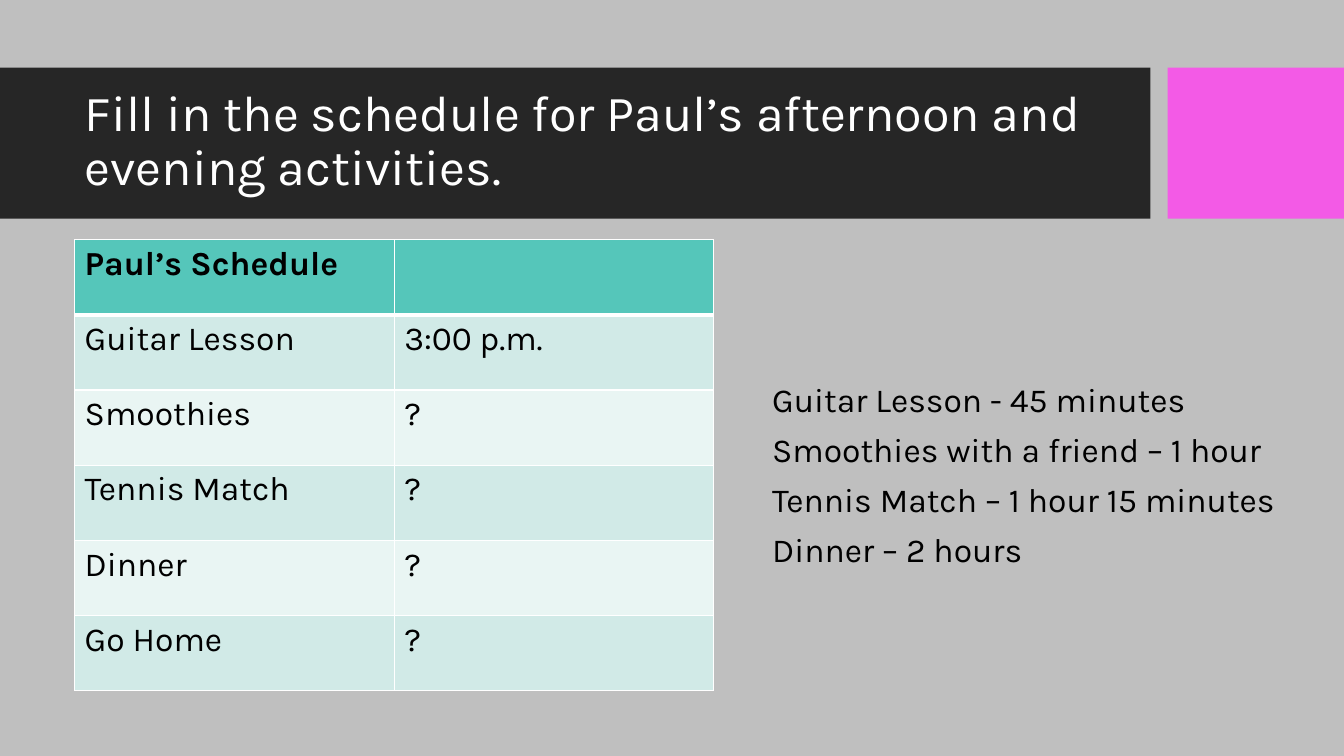
import pptx
import pptx.dml.color
import pptx.enum.shapes
import pptx.enum.text
import pptx.oxml
import pptx.oxml.ns
import pptx.util

Inches, Pt = pptx.util.Inches, pptx.util.Pt
BLACK, WHITE = "000000", "FFFFFF"
LEFT = 0.74  # shared left edge of title and table


def color(hex_code):
    return pptx.dml.color.RGBColor.from_string(hex_code)


def write(paragraph, text, size, hex_code, bold=False):
    run = paragraph.add_run()
    run.text = text
    run.font.name = "Karla"
    run.font.size = Pt(size)
    run.font.bold = bold
    run.font.color.rgb = color(hex_code)


deck = pptx.Presentation()
deck.slide_width, deck.slide_height = Inches(13.33), Inches(7.5)
slide = deck.slides.add_slide(deck.slide_layouts[5])
slide.background.fill.solid()
slide.background.fill.fore_color.rgb = color("BFBFBF")

# Title band and accent block
for left, width, band_fill in [(0, 11.41, "262626"), (11.58, 1.75, "F35AE6")]:
    band = slide.shapes.add_shape(
        pptx.enum.shapes.MSO_SHAPE.RECTANGLE,
        Inches(left), Inches(0.67), Inches(width), Inches(1.5))
    band.shadow.inherit = False
    band.fill.solid()
    band.fill.fore_color.rgb = color(band_fill)
    band.line.fill.background()

# Title, raised above the band
title = slide.shapes.title
title.element.getparent().append(title.element)
title.left, title.top = Inches(LEFT), Inches(0.82)
title.width, title.height = Inches(10.51), Inches(1.18)
title.text_frame.word_wrap = True
title.text_frame.auto_size = pptx.enum.text.MSO_AUTO_SIZE.NONE
title.text_frame.vertical_anchor = pptx.enum.text.MSO_ANCHOR.MIDDLE
heading = title.text_frame.paragraphs[0]
heading.alignment = pptx.enum.text.PP_ALIGN.LEFT
heading.line_spacing = 0.9
write(heading, "Fill in the schedule for Paul’s afternoon and evening activities.",
      36, WHITE)

# Schedule table
schedule = [
    ("Paul’s Schedule", ""),
    ("Guitar Lesson", "3:00 p.m."),
    ("Smoothies", "?"),
    ("Tennis Match", "?"),
    ("Dinner", "?"),
    ("Go Home", "?"),
]
table = slide.shapes.add_table(
    len(schedule), 2, Inches(LEFT), Inches(2.38), Inches(6.34), Inches(4.47)).table
for row, entries in enumerate(schedule):
    is_header = row == 0
    row_fill = "55C6BA" if is_header else ("E9F5F3", "D1EAE7")[row % 2]
    for column, entry in enumerate(entries):
        cell = table.cell(row, column)
        # White rules, heavier between the header and the body
        for side in "LRTB":
            heavy = (row, side) in [(0, "B"), (1, "T")]
            cell_properties = cell._tc.get_or_add_tcPr()
            cell_properties.append(pptx.oxml.parse_xml(
                f'<a:ln{side} {pptx.oxml.ns.nsdecls("a")} w="{Pt(3 if heavy else 1)}">'
                f'<a:solidFill><a:srgbClr val="{WHITE}"/></a:solidFill></a:ln{side}>'))
        cell.fill.solid()
        cell.fill.fore_color.rgb = color(row_fill)
        if entry:
            write(cell.text_frame.paragraphs[0], entry, 24, BLACK, is_header)

# Activity durations
durations = slide.shapes.add_textbox(
    Inches(7.56), Inches(3.75), Inches(5.57), Inches(2.75)).text_frame
durations.word_wrap = True
for index, activity in enumerate([
        "Guitar Lesson - 45 minutes",
        "Smoothies with a friend – 1 hour",
        "Tennis Match – 1 hour 15 minutes",
        "Dinner – 2 hours"]):
    line = durations.add_paragraph() if index else durations.paragraphs[0]
    line.line_spacing = 0.9
    if index:
        line.space_before = Pt(10)
    write(line, activity, 24, BLACK)

deck.save("out.pptx")
